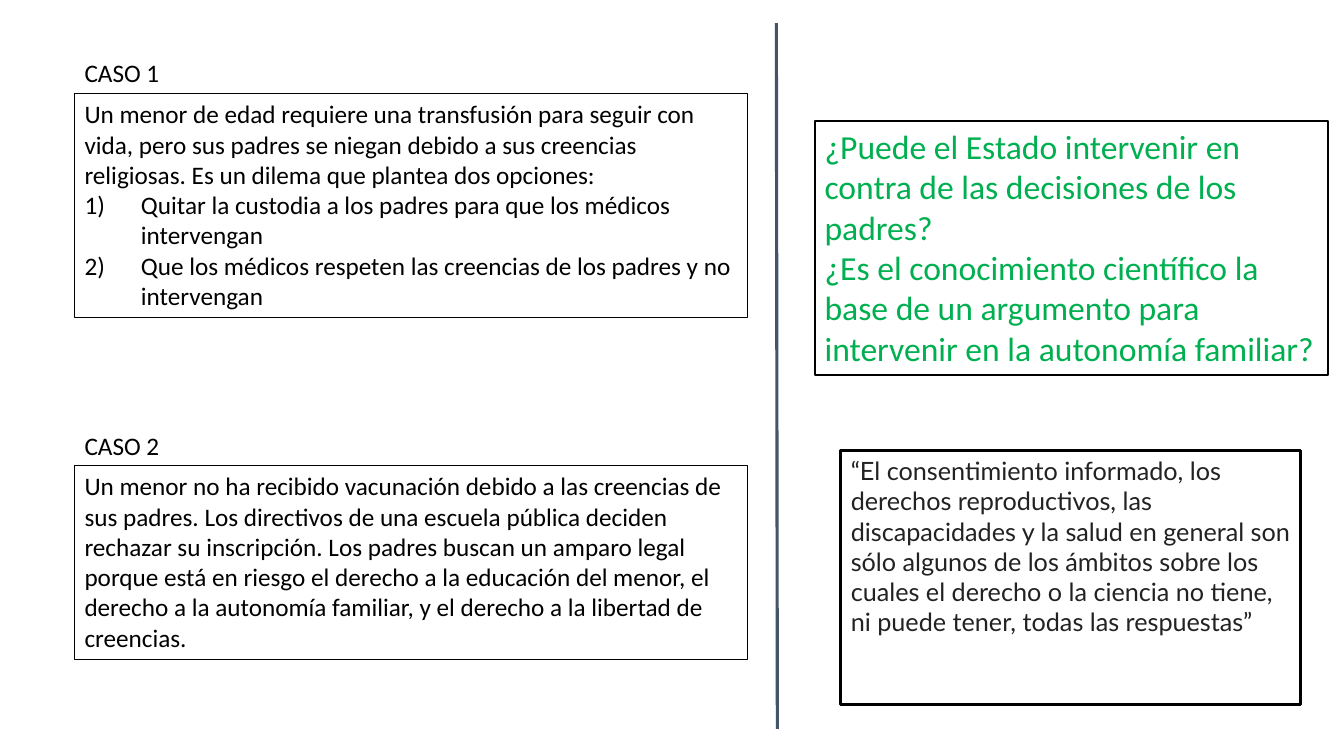
from lxml.etree import SubElement
from pptx import Presentation
from pptx.dml.color import RGBColor
from pptx.enum.shapes import MSO_CONNECTOR, MSO_SHAPE
from pptx.enum.text import MSO_ANCHOR, PP_ALIGN
from pptx.oxml.ns import qn
from pptx.util import Inches, Pt


def color(value):
    return RGBColor.from_string(value)


def write(para, text, size=18, font="Calibri", ink="000000", numbered=False):
    para.alignment = PP_ALIGN.LEFT
    span = para.add_run()
    span.text = text
    span.font.size = Pt(size)
    span.font.name = font
    span.font.color.rgb = color(ink)
    if numbered:
        properties = para._p.get_or_add_pPr()
        properties.set("marL", str(Inches(0.56)))
        properties.set("indent", str(-Inches(0.56)))
        SubElement(properties, qn("a:buFont"), typeface="+mj-lt")
        SubElement(properties, qn("a:buAutoNum"), type="arabicParenR")


class CaseSlide:
    """Holds the slide and the style its elements share."""

    border = "000000"
    divider = "44546A"

    def __init__(self, page):
        self.page = page

    def fill_text(self, box, texts, numbered=(), wrap=True, **style):
        frame = box.text_frame
        frame.word_wrap = wrap
        frame.vertical_anchor = MSO_ANCHOR.TOP
        for index, text in enumerate([*texts, *numbered]):
            para = frame.add_paragraph() if index else frame.paragraphs[0]
            write(para, text, numbered=index >= len(texts), **style)

    def label(self, left, top, width, text, wrap=True):
        box = self.page.shapes.add_textbox(
            Inches(left), Inches(top), Inches(width), Inches(0.4))
        self.fill_text(box, [text], wrap=wrap)

    def framed(self, left, top, width, height, texts, weight=0.75, **style):
        box = self.page.shapes.add_shape(
            MSO_SHAPE.RECTANGLE,
            Inches(left), Inches(top), Inches(width), Inches(height))
        box.shadow.inherit = False
        box.fill.background()
        box.line.color.rgb = color(self.border)
        box.line.width = Pt(weight)
        self.fill_text(box, texts, **style)

    def line(self, start, end, weight):
        points = [Inches(value) for value in (*start, *end)]
        connector = self.page.shapes.add_connector(MSO_CONNECTOR.STRAIGHT, *points)
        connector.line.color.rgb = color(self.divider)
        connector.line.width = Pt(weight)
        SubElement(connector._element.spPr, qn("a:effectLst"))


def main():
    deck = Presentation()
    deck.slide_width = Inches(13.33)
    deck.slide_height = Inches(7.5)
    slide = CaseSlide(deck.slides.add_slide(deck.slide_layouts[6]))

    slide.framed(
        0.74, 0.93, 6.67, 2.22,
        ["Un menor de edad requiere una transfusión para seguir con vida, pero sus "
         "padres se niegan debido a sus creencias religiosas. Es un dilema que "
         "plantea dos opciones:"],
        numbered=[
            "Quitar la custodia a los padres para que los médicos intervengan",
            "Que los médicos respeten las creencias de los padres y no intervengan"])
    slide.label(0.74, 0.52, 0.95, "CASO 1", wrap=False)

    slide.framed(
        0.74, 4.62, 6.67, 1.92,
        ["Un menor no ha recibido vacunación debido a las creencias de sus padres. "
         "Los directivos de una escuela pública deciden rechazar su inscripción. "
         "Los padres buscan un amparo legal porque está en riesgo el derecho a la "
         "educación del menor, el derecho a la autonomía familiar, y el derecho a "
         "la libertad de creencias."])
    slide.label(0.74, 4.22, 1.86, "CASO 2")

    slide.framed(
        8.08, 1.2, 5.09, 2.52,
        ["¿Puede el Estado intervenir en contra de las decisiones de los padres?",
         "¿Es el conocimiento científico la base de un argumento para intervenir "
         "en la autonomía familiar?"],
        weight=1.5, size=24, ink="00B050")
    slide.framed(
        8.34, 4.47, 4.56, 2.52,
        ["“El consentimiento informado, los derechos reproductivos, las "
         "discapacidades y la salud en general son sólo algunos de los ámbitos "
         "sobre los cuales el derecho o la ciencia no tiene, ni puede tener, "
         "todas las respuestas”"],
        weight=2.25, font="Lato", ink="222222")
    slide.line((7.7, 0.23), (7.71, 7.23), 2.25)

    deck.save("out.pptx")


if __name__ == "__main__":
    main()
